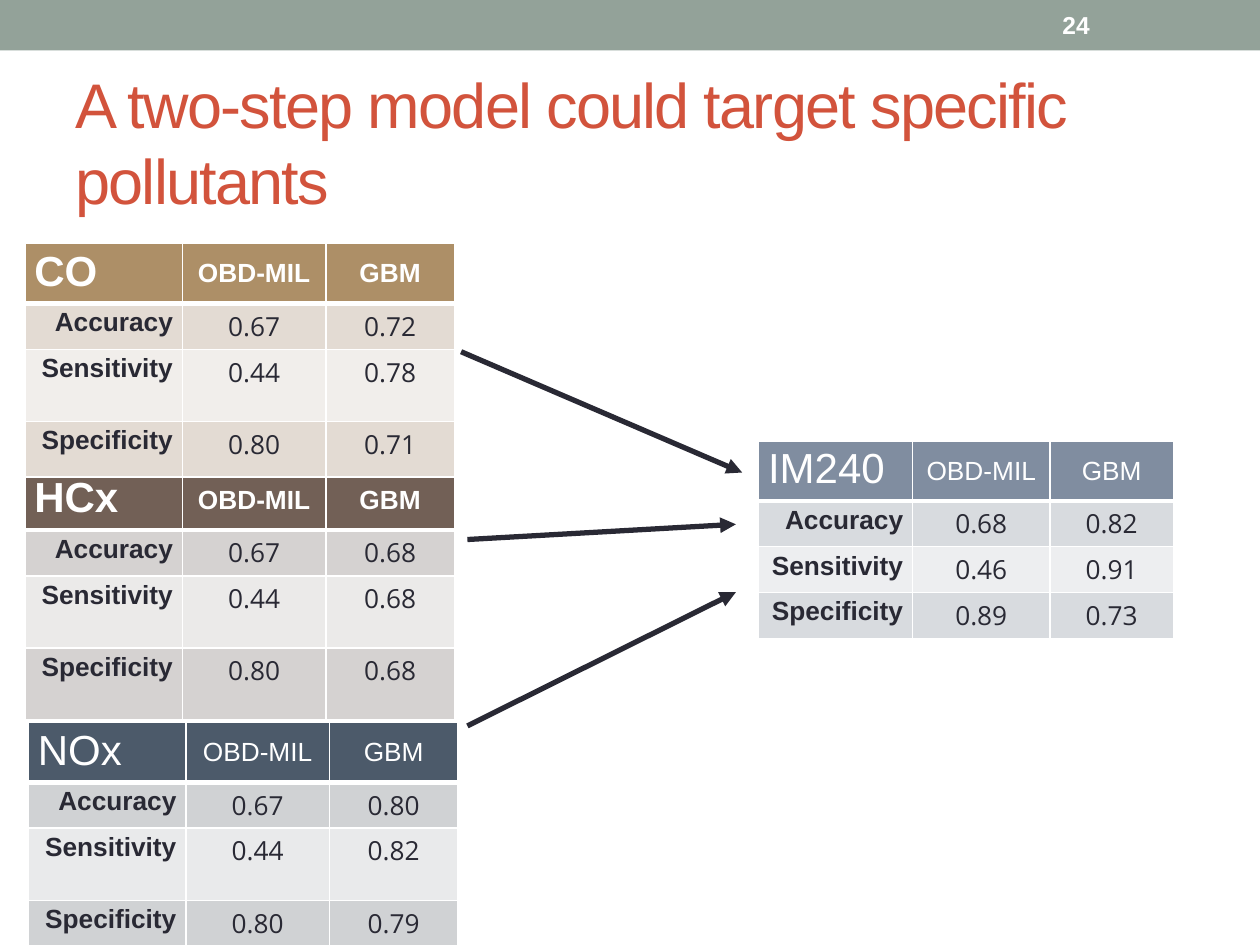
from lxml import etree
from pptx import Presentation
from pptx.dml.color import RGBColor
from pptx.enum import shapes, text
from pptx.oxml import ns
from pptx.util import Pt

COLORS = {
    "band": "93A299", "title": "D2533C", "ink": "292934", "white": "FFFFFF",
    "CO": "AD8F67", "CO odd": "E3DBD3", "CO even": "F1EEEB",
    "HCx": "726056", "HCx odd": "D5D2D1", "HCx even": "EBEAE9",
    "NOx": "4C5A6A", "NOx odd": "D0D2D4", "NOx even": "E9EAEB",
    "IM240": "808DA0", "IM240 odd": "D8DBDF", "IM240 even": "EDEEF0",
}
METRICS = ("Accuracy", "Sensitivity", "Specificity")
ALIGN = text.PP_ALIGN
MIDDLE = text.MSO_ANCHOR.MIDDLE


def rgb(name):
    return RGBColor.from_string(COLORS[name])


def write(frame, words, size=15, color="ink", font="Arial", bold=False,
          align=ALIGN.LEFT, spacing=None):
    frame.word_wrap = True
    paragraph = frame.paragraphs[0]
    paragraph.alignment = align
    run = paragraph.add_run()
    run.text = words
    run.font.size = Pt(size)
    run.font.name = font
    run.font.bold = bold
    run.font.color.rgb = rgb(color)
    if spacing is not None:
        run.font._element.set("spc", str(spacing * 100))


def add_label(slide, box, words, **style):
    label = slide.shapes.add_textbox(*map(Pt, box))
    label.text_frame.vertical_anchor = MIDDLE
    write(label.text_frame, words, **style)


def add_header(slide, left, top, width, height):
    band = slide.shapes.add_shape(
        shapes.MSO_SHAPE.RECTANGLE, Pt(left), Pt(top), Pt(width), Pt(height))
    band.shadow.inherit = False
    band.fill.solid()
    band.fill.fore_color.rgb = rgb("band")
    band.line.fill.background()
    add_label(slide, (left + 600, top + 1.4, 84, 26), "24",
              size=14, color="white", bold=True)
    add_label(slide, (left + 36, top + 42, 648, 77.5),
              "A two-step model could target specific pollutants",
              size=36, color="title", spacing=-1)


def style_cell(cell, fill, bottom=1, top=1):
    cell.margin_left = cell.margin_right = Pt(5.4)
    cell.margin_top = cell.margin_bottom = Pt(2.7)
    properties = cell._tc.get_or_add_tcPr()
    for side, width in zip("LRTB", (1, 1, top, bottom)):
        line = etree.SubElement(properties, ns.qn(f"a:ln{side}"), w=str(Pt(width)))
        paint = etree.SubElement(line, ns.qn("a:solidFill"))
        etree.SubElement(paint, ns.qn("a:srgbClr"), val=COLORS["white"])
    cell.fill.solid()
    cell.fill.fore_color.rgb = rgb(fill)


def add_scores(slide, left, top, widths, heights, pollutant, scores, bold=False):
    frame = slide.shapes.add_table(
        len(heights), len(widths), Pt(left), Pt(top),
        Pt(sum(widths)), Pt(sum(heights)))
    table = frame.table
    table.first_row = table.horz_banding = False
    for column, width in zip(table.columns, widths):
        column.width = Pt(width)
    for row, height in zip(table.rows, heights):
        row.height = Pt(height)

    for index, heading in enumerate((pollutant, "OBD-MIL", "GBM")):
        cell = table.cell(0, index)
        style_cell(cell, pollutant, bottom=3)
        if index:
            cell.vertical_anchor = MIDDLE
        write(cell.text_frame, heading, size=15 if index else 24, color="white",
              bold=bold, align=ALIGN.CENTER if index else ALIGN.LEFT)

    for number, (metric, values) in enumerate(zip(METRICS, scores), 1):
        fill = f"{pollutant} {'odd' if number % 2 else 'even'}"
        for index, words in enumerate((metric, *values)):
            cell = table.cell(number, index)
            style_cell(cell, fill, top=3 if number == 1 else 1)
            if index:
                write(cell.text_frame, words, font="Open Sans", align=ALIGN.CENTER)
            else:
                write(cell.text_frame, words, bold=True, align=ALIGN.RIGHT)


def add_arrow(slide, start, end):
    arrow = slide.shapes.add_connector(
        shapes.MSO_CONNECTOR.STRAIGHT, *map(Pt, (*start, *end)))
    arrow.line.color.rgb = rgb("ink")
    arrow.line.width = Pt(3)
    etree.SubElement(arrow.line._get_or_add_ln(), ns.qn("a:tailEnd"), type="triangle")
    etree.SubElement(arrow._element.spPr, ns.qn("a:effectLst"))


def add_pollutants(slide, left, top):
    widths = (90, 82, 73.5)
    rows = (34, 26.2, 41.3)
    add_scores(slide, left + 2, top + 273.6, widths, (*rows, 26.2), "NOx",
               (("0.67", "0.80"), ("0.44", "0.82"), ("0.80", "0.79")))
    add_scores(slide, left, top + 129.4, widths, (*rows, 41.3), "HCx",
               (("0.67", "0.68"), ("0.44", "0.68"), ("0.80", "0.68")), bold=True)
    add_scores(slide, left, top, widths, (*rows, 31.7), "CO",
               (("0.67", "0.72"), ("0.44", "0.78"), ("0.80", "0.71")), bold=True)


def add_flow(slide, left, top):
    for start, end in (((3.6, 107.3), (157, 98.6)),
                       ((0, 0), (160.6, 69)),
                       ((3.6, 213.8), (157, 137.4))):
        add_arrow(slide, (left + start[0], top + start[1]),
                  (left + end[0], top + end[1]))


def main():
    deck = Presentation()
    deck.slide_width, deck.slide_height = Pt(720), Pt(540)
    slide = deck.slides.add_slide(deck.slide_layouts[6])
    add_header(slide, 0, 0, 720, 28.8)
    add_pollutants(slide, 14.2, 139.2)
    add_flow(slide, 263.5, 201)
    add_scores(slide, 433.5, 252, (88, 78.5, 70.5), (34, 26.2, 26.2, 26.2), "IM240",
               (("0.68", "0.82"), ("0.46", "0.91"), ("0.89", "0.73")))
    deck.save("out.pptx")


if __name__ == "__main__":
    main()
